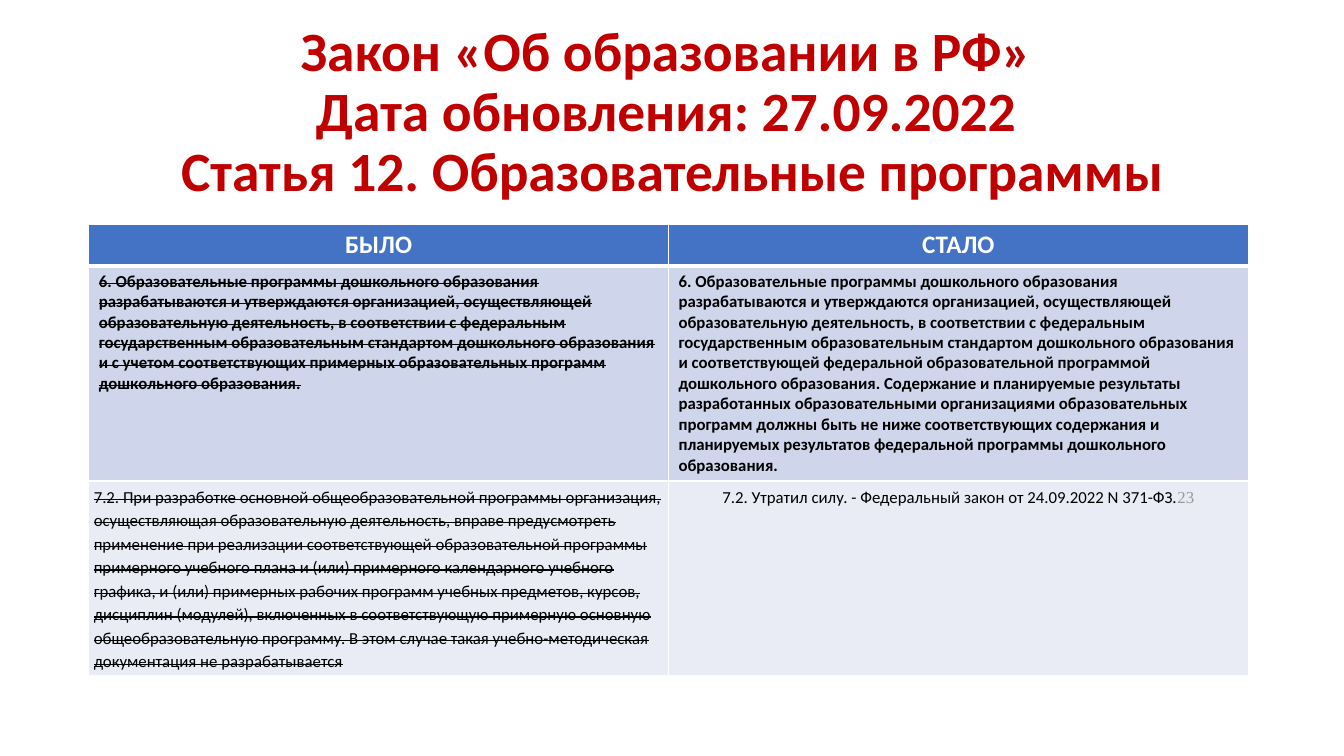
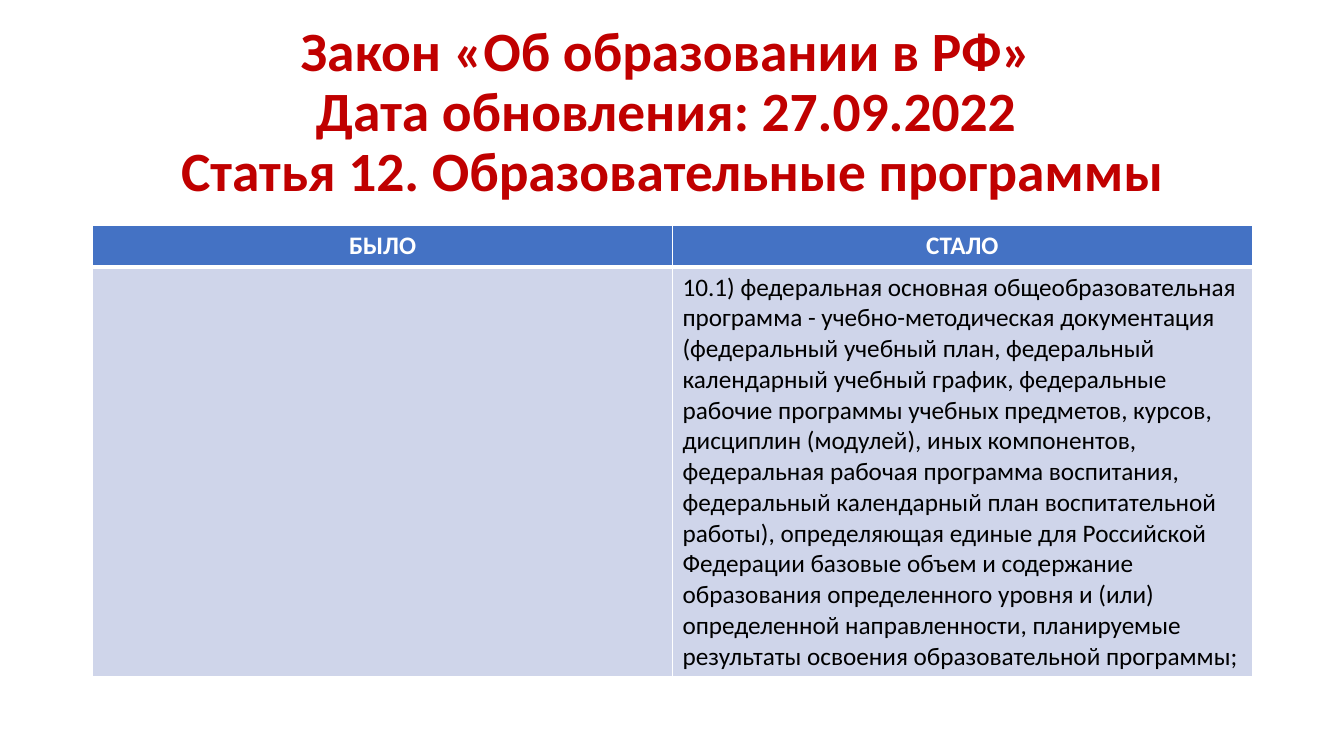
from dataclasses import dataclass

from lxml import etree
from pptx import Presentation
from pptx import util as u
from pptx.dml import color
from pptx.enum import text
from pptx.oxml import ns


@dataclass(frozen=True)
class Theme:
    font: str = "Calibri"
    number_font: str = "Times New Roman"
    title_color: str = "C00000"
    header_fill: str = "4472C4"
    first_band: str = "CFD5EA"
    second_band: str = "E9EBF5"
    white: str = "FFFFFF"
    ink: str = "000000"
    number_color: str = "999999"
    title_size: float = 39.6
    large: float = 18
    small: float = 12
    thin: float = 1
    thick: float = 3


THEME = Theme()


@dataclass(frozen=True)
class Span:
    words: str
    size: float = THEME.small
    bold: bool = False
    strike: bool = False
    color: str = THEME.ink
    font: str = THEME.font


@dataclass(frozen=True)
class Clause:
    spans: tuple[Span, ...] = ()
    centred: bool = False
    spacing: float | None = None
    side_inset: float = 0.1
    end_inset: float = 0.05


@dataclass(frozen=True)
class Comparison:
    left: float
    top: float
    row_heights: tuple[float, ...]
    rows: tuple[tuple[Clause, Clause], ...]


TITLE_LINES = (
    "Закон «Об образовании в РФ» ",
    "Дата обновления: 27.09.2022 ",
    "Статья 12. Образовательные программы",
)
COLUMN_WIDTH = 5.75
HEADER = tuple(
    Clause((Span(label, THEME.large, bold=True, color=THEME.white),), centred=True)
    for label in ("БЫЛО", "СТАЛО")
)
PRESCHOOL = (
    "6. Образовательные программы дошкольного образования разрабатываются и "
    "утверждаются организацией, осуществляющей образовательную деятельность, "
    "в соответствии с федеральным государственным образовательным стандартом "
    "дошкольного образования и "
)
PRESCHOOL_BEFORE = PRESCHOOL + (
    "с учетом соответствующих примерных образовательных программ "
    "дошкольного образования."
)
PRESCHOOL_AFTER = PRESCHOOL + (
    "соответствующей федеральной образовательной программой дошкольного "
    "образования. Содержание и планируемые результаты разработанных "
    "образовательными организациями образовательных программ должны быть "
    "не ниже соответствующих содержания и планируемых результатов "
    "федеральной программы дошкольного образования."
)
GENERAL_BEFORE = (
    "7.2. При разработке основной общеобразовательной программы организация, "
    "осуществляющая образовательную деятельность, вправе предусмотреть "
    "применение при реализации соответствующей образовательной программы "
    "примерного учебного плана и (или) примерного календарного учебного "
    "графика, и (или) примерных рабочих программ учебных предметов, курсов, "
    "дисциплин (модулей), включенных в соответствующую примерную основную "
    "общеобразовательную программу. В этом случае такая учебно-методическая "
    "документация не разрабатывается"
)
GENERAL_AFTER = "7.2. Утратил силу. - Федеральный закон от 24.09.2022 N 371-ФЗ."
FEDERAL_PROGRAMME = (
    "10.1) федеральная основная общеобразовательная программа - "
    "учебно-методическая документация (федеральный учебный план, федеральный "
    "календарный учебный график, федеральные рабочие программы учебных "
    "предметов, курсов, дисциплин (модулей), иных компонентов, федеральная "
    "рабочая программа воспитания, федеральный календарный план "
    "воспитательной работы), определяющая единые для Российской Федерации "
    "базовые объем и содержание образования определенного уровня и (или) "
    "определенной направленности, планируемые результаты освоения "
    "образовательной программы;"
)

COMPARISONS = (
    Comparison(0.88, 2.23, (0.41, 2.12, 1.93), (
        HEADER,
        (
            Clause((Span(PRESCHOOL_BEFORE, bold=True, strike=True),)),
            Clause((Span(PRESCHOOL_AFTER, bold=True),)),
        ),
        (
            Clause((Span(GENERAL_BEFORE, strike=True),), spacing=1.15,
                   side_inset=0.05, end_inset=0.03),
            Clause((Span(GENERAL_AFTER),
                    Span("23", color=THEME.number_color, font=THEME.number_font)),
                   centred=True, spacing=1.15, side_inset=0.01, end_inset=0.03),
        ),
    )),
    Comparison(0.92, 2.24, (0.41, 4.06), (
        HEADER,
        (Clause(), Clause((Span(FEDERAL_PROGRAMME, THEME.large),))),
    )),
)


def add_span(paragraph, span: Span) -> None:
    run = paragraph.add_run()
    run.text = span.words
    run.font.name = span.font
    run.font.size = u.Pt(span.size)
    run.font.bold = span.bold
    run.font.color.rgb = color.RGBColor.from_string(span.color)
    if span.strike:
        run._r.get_or_add_rPr().set("strike", "sngStrike")


def set_borders(cell, top: float, bottom: float) -> None:
    properties = cell._tc.get_or_add_tcPr()
    widths = {"lnL": THEME.thin, "lnR": THEME.thin, "lnT": top, "lnB": bottom}
    for side, width in widths.items():
        line = etree.SubElement(properties, ns.qn(f"a:{side}"), w=str(u.Pt(width)))
        fill = etree.SubElement(line, ns.qn("a:solidFill"))
        etree.SubElement(fill, ns.qn("a:srgbClr"), val=THEME.white)


def fill_cell(cell, clause: Clause, row: int) -> None:
    set_borders(cell, THEME.thick if row == 1 else THEME.thin,
                THEME.thick if row == 0 else THEME.thin)
    bands = (THEME.header_fill, THEME.first_band, THEME.second_band)
    cell.fill.solid()
    cell.fill.fore_color.rgb = color.RGBColor.from_string(bands[row])
    cell.margin_left = cell.margin_right = u.Inches(clause.side_inset)
    cell.margin_top = cell.margin_bottom = u.Inches(clause.end_inset)
    paragraph = cell.text_frame.paragraphs[0]
    paragraph.alignment = (
        text.PP_ALIGN.CENTER if clause.centred else text.PP_ALIGN.LEFT
    )
    if clause.spacing:
        paragraph.line_spacing = clause.spacing
    for span in clause.spans:
        add_span(paragraph, span)


def add_title(slide) -> None:
    title = slide.shapes.title
    title.left, title.top = u.Inches(0.92), u.Inches(0.4)
    title.width, title.height = u.Inches(11.5), u.Inches(1.45)
    frame = title.text_frame
    frame.word_wrap = True
    frame.auto_size = text.MSO_AUTO_SIZE.NONE
    frame.vertical_anchor = text.MSO_ANCHOR.MIDDLE
    paragraph = frame.paragraphs[0]
    paragraph.alignment = text.PP_ALIGN.CENTER
    paragraph.line_spacing = 0.9
    for index, words in enumerate(TITLE_LINES):
        if index:
            paragraph.add_line_break()
        add_span(paragraph, Span(words, THEME.title_size, bold=True,
                                 color=THEME.title_color))


def add_comparison(slide, comparison: Comparison) -> None:
    columns = len(HEADER)
    table = slide.shapes.add_table(
        len(comparison.rows), columns,
        u.Inches(comparison.left), u.Inches(comparison.top),
        u.Inches(COLUMN_WIDTH * columns), u.Inches(sum(comparison.row_heights)),
    ).table
    table.horz_banding = False
    for column in table.columns:
        column.width = u.Inches(COLUMN_WIDTH)
    for row, (height, clauses) in enumerate(
        zip(comparison.row_heights, comparison.rows)
    ):
        table.rows[row].height = u.Inches(height)
        for column, clause in enumerate(clauses):
            fill_cell(table.cell(row, column), clause, row)


def main() -> None:
    deck = Presentation()
    deck.slide_width, deck.slide_height = u.Inches(13.33), u.Inches(7.5)
    title_only = deck.slide_layouts.get_by_name("Title Only")
    for comparison in COMPARISONS:
        slide = deck.slides.add_slide(title_only)
        add_title(slide)
        add_comparison(slide, comparison)
    deck.save("out.pptx")


if __name__ == "__main__":
    main()
